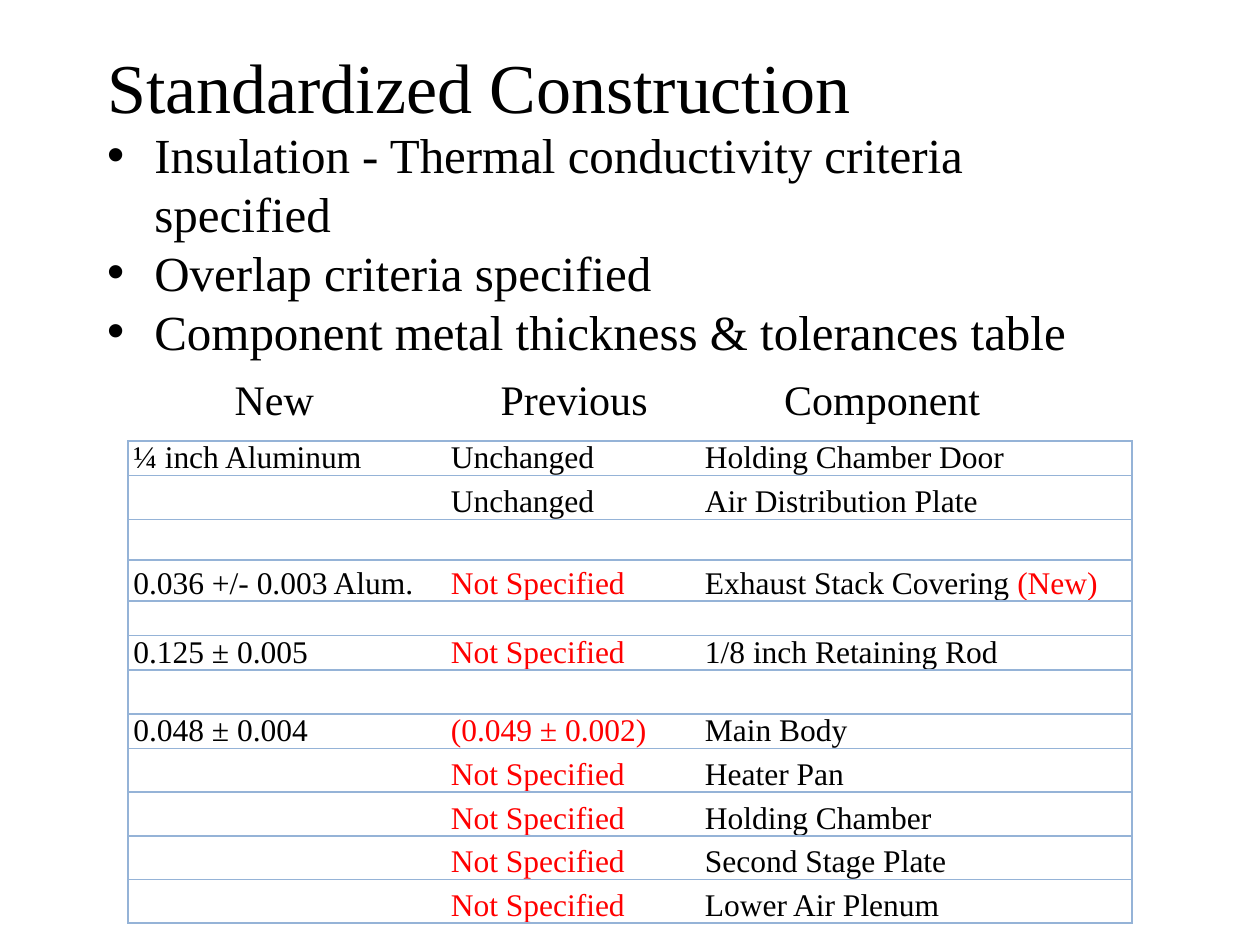
from lxml.etree import SubElement as Sub
from pptx import Presentation
from pptx.dml.color import RGBColor as RGB
from pptx.enum.text import MSO_ANCHOR as Anchor, MSO_AUTO_SIZE as Fit, PP_ALIGN as Align
from pptx.oxml.ns import qn
from pptx.util import Pt

HUES = {"text": "000000", "new": "FF0000", "line": "95B3D7"}
FACE = "Times New Roman"


def write(para, text, size, hue="text"):
    run = para.add_run()
    run.text = text
    look = {"name": FACE, "size": Pt(size), "bold": False}
    for key, value in look.items():
        setattr(run.font, key, value)
    run.font.color.rgb = RGB.from_string(HUES[hue])


def place(shape, box):
    for key, value in zip(("left", "top", "width", "height"), box):
        setattr(shape, key, Pt(value))


deck = Presentation()
deck.slide_width, deck.slide_height = Pt(720), Pt(540)
slide = deck.slides.add_slide(deck.slide_layouts[0])

ROWS = [
    (19.8, "¼ inch Aluminum", "Unchanged", "Holding Chamber Door"),
    (25, "", "Unchanged", "Air Distribution Plate"),
    (23.2, "", "", ""),
    (23.4, "0.036 +/- 0.003 Alum.", "Not Specified", "Exhaust Stack Covering |(New)"),
    (19.8, "", "", ""),
    (19.8, "0.125 ± 0.005", "Not Specified", "1/8 inch Retaining Rod"),
    (25, "", "", ""),
    (19.8, "0.048 ± 0.004", "(0.049 ± 0.002)", "Main Body"),
    (25, "", "Not Specified", "Heater Pan"),
    (25, "", "Not Specified", "Holding Chamber"),
    (25, "", "Not Specified", "Second Stage Plate"),
    (25, "", "Not Specified", "Lower Air Plenum"),
]
WIDTHS = (181.5, 145.2, 247)
high = sum(row[0] for row in ROWS)
frame = slide.shapes.add_table(len(ROWS), len(WIDTHS), Pt(73.2), Pt(252), Pt(sum(WIDTHS)), Pt(high))
table = frame.table
table.first_row = table.horz_banding = False
for col, width in zip(table.columns, WIDTHS):
    col.width = Pt(width)

CELL = {
    "margin_left": Pt(3), "margin_right": Pt(3), "margin_top": Pt(0.7),
    "margin_bottom": Pt(0), "vertical_anchor": Anchor.BOTTOM,
}
for r, (tall, *texts) in enumerate(ROWS):
    table.rows[r].height = Pt(tall)
    for c, text in enumerate(texts):
        cell = table.cell(r, c)
        for key, value in CELL.items():
            setattr(cell, key, value)
        para = cell.text_frame.paragraphs[0]
        if r != 3:
            para.line_spacing = Pt(17.4)
        for part in text.split("|") if text else ():
            write(para, part, 18, "new" if part.startswith(("Not", "(")) else "text")
        if not text:
            Sub(para._p, qn("a:endParaRPr"), sz="1000")
        props = cell._tc.get_or_add_tcPr()
        shown = {"L": c == 0, "R": c == len(WIDTHS) - 1, "T": True, "B": True}
        for side, seen in shown.items():
            line = Sub(props, qn("a:ln" + side), w=str(Pt(1)))
            fill = Sub(line, qn("a:solidFill" if seen else "a:noFill"))
            if seen:
                Sub(fill, qn("a:srgbClr"), val=HUES["line"])
        cell.fill.background()

body = slide.placeholders[1]
place(body, (54, 67, 606, 143.3))
body.text_frame.vertical_anchor = Anchor.MIDDLE
body.text_frame.auto_size = Fit.SHAPE_TO_FIT_TEXT
POINTS = (
    "Insulation - Thermal conductivity criteria specified",
    "Overlap criteria specified",
    "Component metal thickness & tolerances table",
)
LIST = {"alignment": Align.LEFT, "space_before": Pt(0)}
for i, point in enumerate(POINTS):
    para = body.text_frame.add_paragraph() if i else body.text_frame.paragraphs[0]
    for key, value in LIST.items():
        setattr(para, key, value)
    props = para._p.get_or_add_pPr()
    props.set("marL", str(Pt(27)))
    props.set("indent", str(Pt(-27)))
    Sub(props, qn("a:buFont"), typeface="Arial")
    Sub(props, qn("a:buChar"), char="•")
    write(para, point, 28)

title = slide.shapes.title
place(title, (54, 18, 612, 62))
title.text_frame.vertical_anchor = Anchor.MIDDLE
para = title.text_frame.paragraphs[0]
para.alignment = Align.LEFT
write(para, "Standardized Construction", 40)

heads = slide.shapes.add_textbox(Pt(111), Pt(210), Pt(534), Pt(36))
heads.text_frame.word_wrap = True
para = heads.text_frame.paragraphs[0]
tabs = Sub(para._p.get_or_add_pPr(), qn("a:tabLst"))
for stop in (16, 168, 330):
    Sub(tabs, qn("a:tab"), pos=str(Pt(stop)), algn="l")
write(para, "\tNew\tPrevious\tComponent", 24)

deck.save("out.pptx")
